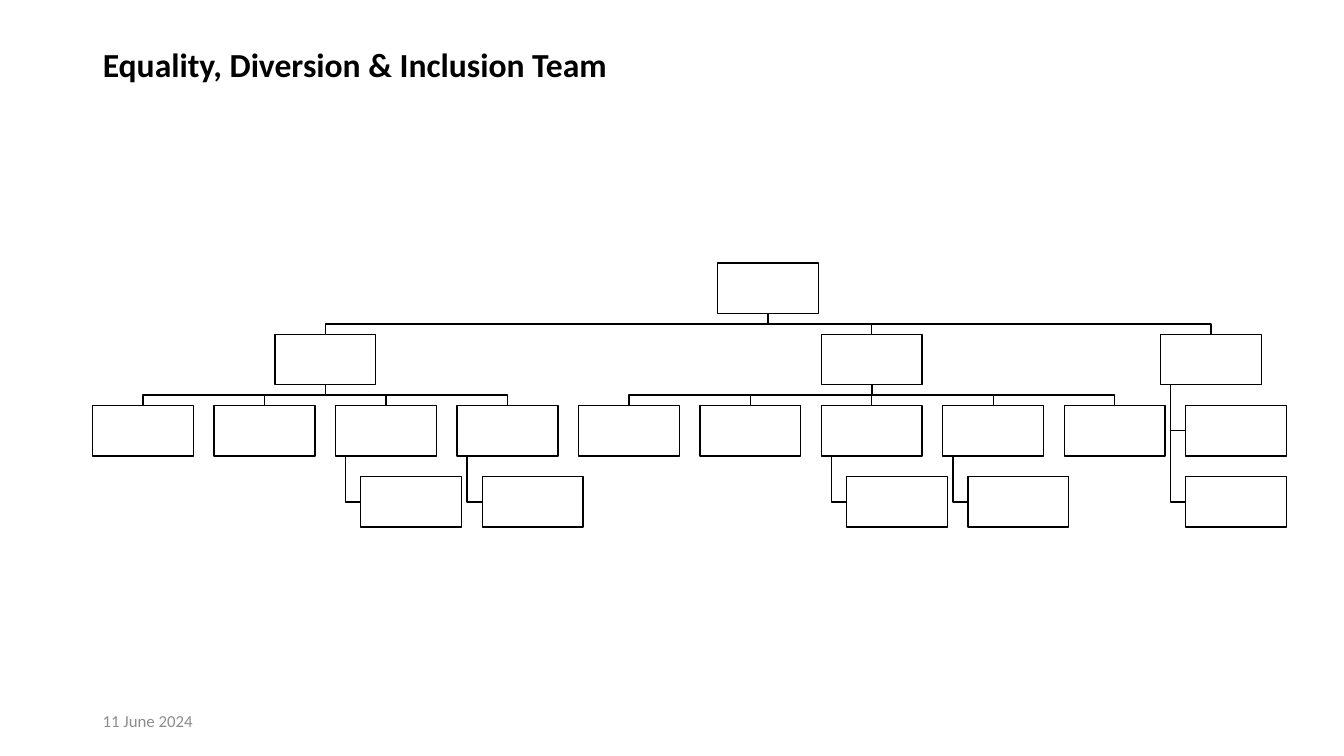
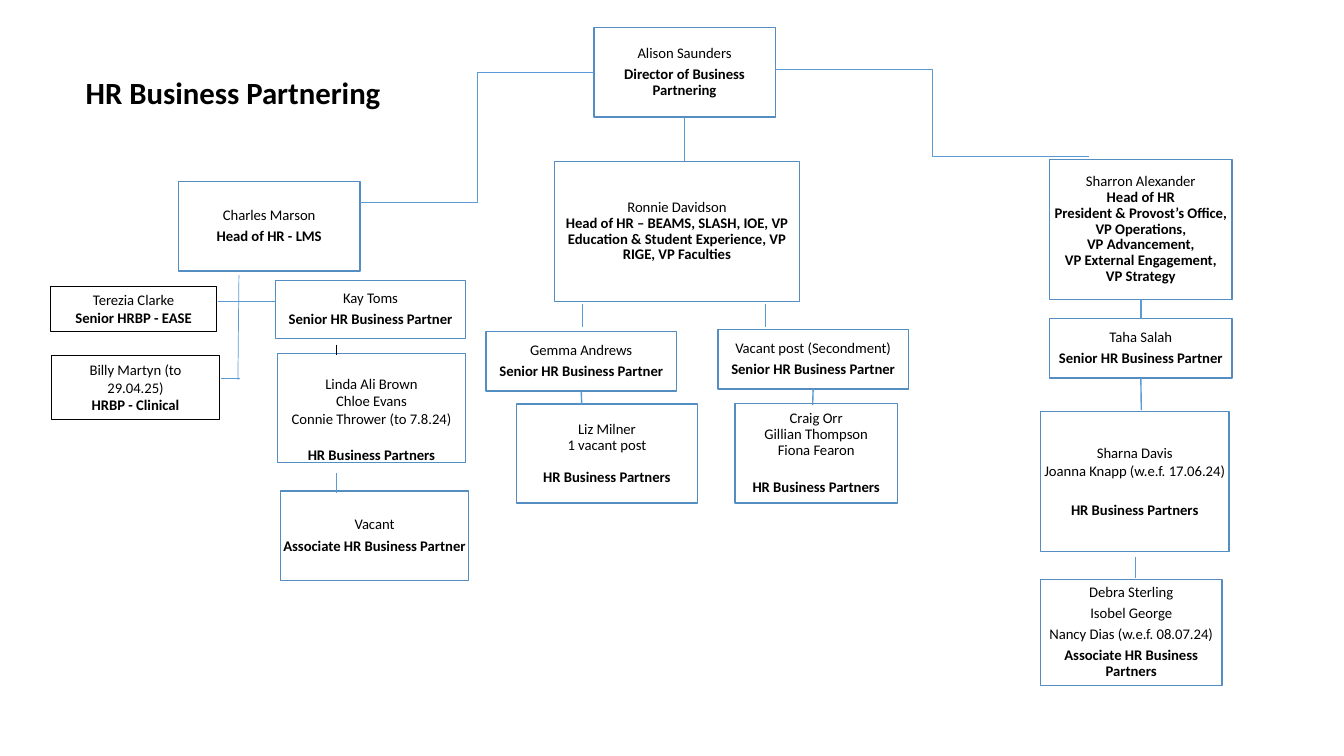
from pptx import Presentation
from pptx.dml.color import RGBColor
from pptx.enum.shapes import MSO_CONNECTOR, MSO_SHAPE
from pptx.enum.text import MSO_ANCHOR, PP_ALIGN
from pptx.oxml.ns import qn
from pptx.util import Inches, Pt
from lxml import etree

BLACK = RGBColor(0x00, 0x00, 0x00)
WHITE = RGBColor(0xFF, 0xFF, 0xFF)
GREY = RGBColor(0x8C, 0x8C, 0x8C)
CARD_BLUE = RGBColor(0x53, 0x8D, 0xC1)
LINK_BLUE = RGBColor(0x5B, 0x9B, 0xD5)
FONT = "Calibri"

LEFT, CENTER = PP_ALIGN.LEFT, PP_ALIGN.CENTER
MIDDLE, TOP_ANCHOR = MSO_ANCHOR.MIDDLE, MSO_ANCHOR.TOP
RECT = MSO_SHAPE.RECTANGLE
STRAIGHT, ELBOW = MSO_CONNECTOR.STRAIGHT, MSO_CONNECTOR.ELBOW
TOP, BOTTOM = 0, 2

TITLE_ONLY = 5
NODE_W, NODE_H = 1, 0.5
COLUMNS, ROWS = 10, 4
HANG_INDENT, HANG_STEM = 0.25, 0.1

SENIOR = ["Senior HR Business Partner"]
PARTNERS = ["HR Business Partners"]

# key: (left, top, width, height), names, roles, format
CARDS = {
    "director": ((5.89, 0.27, 1.8, 0.89), ["Alison Saunders"],
                 ["Director of Business Partnering"], {}),
    "lms": ((1.77, 1.8, 1.8, 0.89), ["Charles Marson"],
            ["Head of HR - LMS"], {}),
    "faculties": ((5.5, 1.6, 2.43, 1.39), ["Ronnie Davidson"],
                  ["Head of HR – BEAMS, SLASH, IOE, VP Education & Student "
                   "Experience, VP RIGE, VP Faculties"], {"gap": 0}),
    "office": ((10.41, 1.58, 1.81, 1.39), ["Sharron Alexander"],
               ["Head of HR", "President & Provost’s Office,",
                "VP Operations,", "VP Advancement,",
                "VP External Engagement,", "VP Strategy"], {"gap": 0}),
    "toms": ((2.73, 2.78, 1.89, 0.58), ["Kay Toms"], SENIOR, {}),
    "lms_team": ((2.75, 3.51, 1.87, 1.08),
                 ["Linda Ali Brown", "Chloe Evans",
                  "Connie Thrower (to 7.8.24)"], PARTNERS,
                 {"gap": 0, "role_gap": 12.8, "spacing": 1, "top_inset": 0.22}),
    "associate": ((2.78, 4.87, 1.87, 0.89), ["Vacant"],
                  ["Associate HR Business Partner"], {}),
    "andrews": ((4.82, 3.29, 1.89, 0.59), ["Gemma Andrews"], SENIOR, {}),
    "andrews_team": ((5.12, 4.01, 1.8, 0.98), ["Liz Milner", "1 vacant post"],
                     PARTNERS, {"gap": 0, "role_gap": 11.5}),
    "secondment": ((7.12, 3.27, 1.89, 0.59), ["Vacant post (Secondment)"],
                   SENIOR, {}),
    "secondment_team": ((7.29, 4, 1.61, 0.99),
                        ["Craig Orr", "Gillian Thompson", "Fiona Fearon"],
                        PARTNERS, {"gap": 0, "role_gap": 15.2}),
    "salah": ((10.41, 3.16, 1.81, 0.59), ["Taha Salah"], SENIOR, {}),
    "salah_team": ((10.32, 4.08, 1.87, 1.39),
                   ["Sharna Davis", "Joanna Knapp (w.e.f. 17.06.24)"],
                   PARTNERS, {"gap": 0, "role_gap": 15.2, "spacing": 1}),
    "office_associates": ((10.32, 5.75, 1.8, 1.05),
                          ["Debra Sterling", "Isobel George",
                           "Nancy Dias (w.e.f. 08.07.24)"],
                          ["Associate HR Business Partners"], {}),
}

SIDE_CARDS = [
    ((0.5, 2.84, 1.65, 0.45), ["Terezia Clarke"], ["Senior HRBP - EASE"]),
    ((0.51, 3.53, 1.67, 0.63), ["Billy Martyn (to 29.04.25)"],
     ["HRBP - Clinical"]),
]
SIDE_FORMAT = dict(gap=0, spacing=1, fill=None, line=BLACK, width=0.75,
                   inset=0.1, top_inset=0.05, anchor=TOP_ANCHOR)

# start, end, format
LINKS = [
    ((6.79, 1.16), (6.79, 1.6), {"begin": ("director", BOTTOM), "width": 0.5}),
    ((5.78, 3.02), (5.78, 3.24), {}),
    ((7.59, 3.02), (7.59, 3.24), {}),
    ((5.77, 3.88), (5.77, 4.01), {"begin": ("andrews", BOTTOM)}),
    ((8.06, 3.86), (8.06, 4.02), {"begin": ("secondment", BOTTOM)}),
    ((11.32, 2.97), (11.32, 3.16),
     {"begin": ("office", BOTTOM), "end": ("salah", TOP)}),
    ((11.32, 3.75), (11.32, 4.07), {"begin": ("salah", BOTTOM)}),
    ((11.26, 5.53), (11.26, 5.73), {}),
    ((2.16, 2.99), (2.73, 2.99), {"width": 0.5}),
    ((2.37, 2.73), (2.36, 3.77), {"width": 0.5}),
    ((2.19, 3.75), (2.38, 3.75), {"width": 0.5}),
    ((3.34, 3.42), (3.34, 3.52), {"width": 0.5, "color": BLACK}),
    ((3.34, 4.69), (3.34, 4.89), {"width": 0.5}),
    ((7.69, 0.69), (10.8, 1.55), {"width": 0.5, "kind": ELBOW}),
    ((5.89, 0.72), (3.57, 2.01), {"width": 0.5, "kind": ELBOW}),
]


def format_text(p, text, size=10.5, color=BLACK, bold=False, align=CENTER,
                spacing=1, before=0, after=0):
    p.alignment = align
    p.line_spacing = spacing
    p.space_before, p.space_after = Pt(before), Pt(after)
    r = p.add_run()
    r.text = text
    r.font.name, r.font.size, r.font.bold = FONT, Pt(size), bold
    r.font.color.rgb = color


def add_titled_slide(prs, title, box, size):
    s = prs.slides.add_slide(prs.slide_layouts[TITLE_ONLY])
    sp = s.shapes.title
    sp.left, sp.top, sp.width, sp.height = map(Inches, box)
    tf = sp.text_frame
    tf.word_wrap = True
    tf.vertical_anchor = MIDDLE
    format_text(tf.paragraphs[0], title, size=size, bold=True, align=LEFT,
                spacing=0.9)
    return s


def add_date(s, text, box):
    tf = s.shapes.add_textbox(*map(Inches, box)).text_frame
    tf.word_wrap = True
    tf.vertical_anchor = MIDDLE
    format_text(tf.paragraphs[0], text, size=12, color=GREY, align=LEFT)


def add_box(s, box, fill=WHITE, line=BLACK, width=1):
    sp = s.shapes.add_shape(RECT, *map(Inches, box))
    sp.shadow.inherit = False
    if fill is None:
        sp.fill.background()
    else:
        sp.fill.solid()
        sp.fill.fore_color.rgb = fill
    sp.line.color.rgb = line
    sp.line.width = Pt(width)
    return sp


def add_card(s, box, names, roles, gap=3.7, role_gap=0, spacing=0.9,
             fill=WHITE, line=CARD_BLUE, width=1, inset=0.01, top_inset=0.01,
             anchor=MIDDLE):
    """Box with names in regular type above roles in bold."""
    sp = add_box(s, box, fill, line, width)
    tf = sp.text_frame
    tf.word_wrap = True
    tf.vertical_anchor = anchor
    tf.margin_left = tf.margin_right = Inches(inset)
    tf.margin_top, tf.margin_bottom = Inches(top_inset), Inches(0.01)
    for i, text in enumerate(names + roles):
        p = tf.add_paragraph() if i else tf.paragraphs[0]
        format_text(p, text, bold=i >= len(names), spacing=spacing, after=gap,
                    before=role_gap if i == len(names) else 0)
    return sp


def add_link(s, start, end, color=LINK_BLUE, width=1, kind=STRAIGHT,
             begin_at=None, end_at=None):
    """Connector between two points, joined to (shape, site) where given."""
    link = s.shapes.add_connector(kind, *start, *end)
    link.line.color.rgb = color
    link.line.width = Pt(width)
    if begin_at:
        link.begin_connect(*begin_at)
    if end_at:
        link.end_connect(*end_at)
    etree.SubElement(link._element.spPr, qn("a:effectLst"))


def add_polyline(s, points):
    builder = s.shapes.build_freeform(*points[0])
    builder.add_line_segments(points[1:], close=False)
    sp = builder.convert_to_shape()
    sp.shadow.inherit = False
    sp.fill.background()
    sp.line.color.rgb = BLACK
    sp.line.width = Pt(1)


def link_below(s, parent, child):
    """Line from the parent's bottom to the top of a child one row down."""
    x1, y1 = parent.left + parent.width // 2, parent.top + parent.height
    x2, y2 = child.left + child.width // 2, child.top
    if abs(x1 - x2) < Inches(0.01):
        add_link(s, (x1, y1), (x2, y2), color=BLACK,
                 begin_at=(parent, BOTTOM), end_at=(child, TOP))
    else:
        mid = (y1 + y2) // 2
        add_polyline(s, [(x1, y1), (x1, mid), (x2, mid), (x2, y2)])


def link_hanging(s, parent, child):
    """Line from under the parent's left end to the child's left side."""
    x = parent.left + Inches(HANG_STEM)
    y = child.top + child.height // 2
    add_polyline(s, [(x, parent.top + parent.height), (x, y), (child.left, y)])


def add_org_chart(s, left, top, width, height):
    pitch = (width - NODE_W) / (COLUMNS - 1)
    step = (height - NODE_H) / (ROWS - 1)

    def add_node(column, row, indent=0):
        return add_box(s, (left + column * pitch + indent, top + row * step,
                           NODE_W, NODE_H))

    heads = []
    # first column, last column, columns with a hanging node
    for first, last, hanging in [(0, 3, (2, 3)), (4, 8, (6, 7))]:
        head = add_node((first + last) / 2, 1)
        heads.append(head)
        for column in range(first, last + 1):
            member = add_node(column, 2)
            link_below(s, head, member)
            if column in hanging:
                link_hanging(s, member, add_node(column, 3, HANG_INDENT))

    side_head = add_node(COLUMNS - 1, 1, -HANG_INDENT)
    heads.append(side_head)
    for row in (2, 3):
        link_hanging(s, side_head, add_node(COLUMNS - 1, row))

    root = add_node(0, 0)
    root.left = (heads[0].left + heads[-1].left) // 2
    for head in heads:
        link_below(s, root, head)


def add_partnering_chart(s, left=0, top=0):
    def shift(box):
        return (left + box[0], top + box[1], *box[2:])

    cards = {key: add_card(s, shift(box), names, roles, **fmt)
             for key, (box, names, roles, fmt) in CARDS.items()}
    for box, names, roles in SIDE_CARDS:
        add_card(s, shift(box), names, roles, **SIDE_FORMAT)
    for start, end, fmt in LINKS:
        fmt = dict(fmt)
        for name in ("begin", "end"):
            if name in fmt:
                key, site = fmt.pop(name)
                fmt[name + "_at"] = (cards[key], site)
        add_link(s, tuple(map(Inches, shift(start))),
                 tuple(map(Inches, shift(end))), **fmt)


def main():
    prs = Presentation()
    prs.slide_width, prs.slide_height = Inches(13.33), Inches(7.5)

    s = add_titled_slide(prs, "Equality, Diversion & Inclusion Team",
                         (0.92, 0.4, 11.5, 0.52), 24)
    add_org_chart(s, 0.92, 2.61, 11.84, 2.62)
    add_date(s, "11 June 2024", (0.92, 6.95, 3, 0.4))

    s = add_titled_slide(prs, "HR Business Partnering",
                         (0.75, 0.54, 3.31, 0.79), 22)
    add_partnering_chart(s)

    prs.save("out.pptx")


if __name__ == "__main__":
    main()
